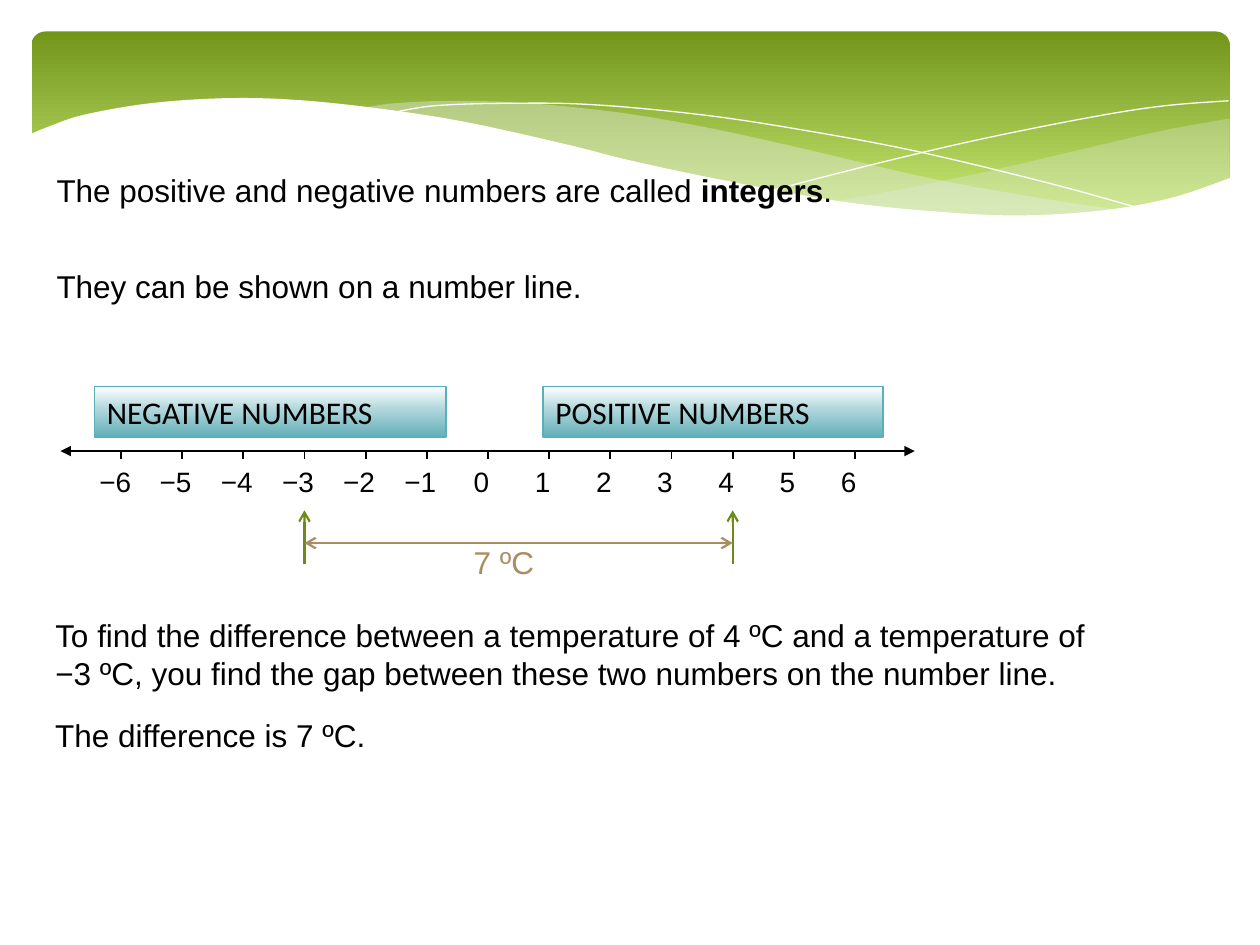
from collections import namedtuple
from copy import deepcopy
from lxml import etree
from pptx import Presentation
from pptx.dml.color import RGBColor
from pptx.enum.shapes import MSO_CONNECTOR as Connector, MSO_SHAPE as Shape
from pptx.enum.text import MSO_AUTO_SIZE as AutoSize
from pptx.oxml.ns import qn
from pptx.util import Inches, Pt

Box = namedtuple("Box", "left top width height")
BLACK, WHITE, MIST, GREEN, TAN = "000000", "FFFFFF", "E7ECED", "6B8C19", "A98D63"
MINUS = "−"


def color(hex_code):
    return RGBColor.from_string(hex_code)


def fill_gradient(shape, stops):
    shape.fill.gradient()
    shape.fill.gradient_angle = 270
    stop_list = shape._element.spPr.find(qn("a:gradFill")).find(qn("a:gsLst"))
    for _ in stops[2:]:
        stop_list.append(deepcopy(stop_list[-1]))
    for stop, (position, hex_code) in zip(shape.fill.gradient_stops, stops):
        stop.position = position
        stop.color.rgb = color(hex_code)


def smooth(points, steps=6):
    padded = [points[0], *points, points[-1]]
    curve = [points[0]]
    for a, b, c, d in zip(padded, padded[1:], padded[2:], padded[3:]):
        for step in range(1, steps + 1):
            t = step / steps
            curve.append(tuple(
                (2 * q + (r - p) * t + (2 * p - 5 * q + 4 * r - s) * t ** 2
                 + (3 * q - p - 3 * r + s) * t ** 3) / 2
                for p, q, r, s in zip(a, b, c, d)))
    return curve


def add_outline(page, box, points, closed):
    spots = [(Inches(box.left + x), Inches(box.top + y)) for x, y in points]
    builder = page.shapes.build_freeform(*spots[0])
    builder.add_line_segments(spots[1:], close=closed)
    shape = builder.convert_to_shape()
    shape.shadow.inherit = False
    return shape


def add_area(page, box, points, hex_code, alpha=100):
    shape = add_outline(page, box, points, True)
    shape.fill.solid()
    shape.fill.fore_color.rgb = color(hex_code)
    shape.line.fill.background()
    if alpha < 100:
        tone = shape._element.spPr.find(qn("a:solidFill"))[0]
        etree.SubElement(tone, qn("a:alpha")).set("val", str(alpha * 1000))


def add_curve(page, box, points):
    shape = add_outline(page, box, smooth(points), False)
    shape.fill.background()
    shape.line.color.rgb = color(WHITE)
    shape.line.width = Pt(0)


def add_text(page, box, lines, size=18, font="Arial", hex_code=BLACK, wrap=False):
    text_box = page.shapes.add_textbox(*map(Inches, box))
    frame = text_box.text_frame
    frame.word_wrap = wrap
    frame.auto_size = AutoSize.SHAPE_TO_FIT_TEXT
    for index, line in enumerate(lines):
        para = frame.add_paragraph() if index else frame.paragraphs[0]
        para.font.size = Pt(size)
        para.font.name = font
        para.font.color.rgb = color(hex_code)
        for position, piece in enumerate(line.split("*")):
            span = para.add_run()
            span.text = piece
            if position % 2:
                span.font.bold = True
    return text_box


def add_line(page, start, end, hex_code, width, **ends):
    line = page.shapes.add_connector(
        Connector.STRAIGHT, *map(Inches, (*start, *end)))
    line.line.color.rgb = color(hex_code)
    line.line.width = Pt(width)
    outline = line.line._get_or_add_ln()
    for end_name in ("head", "tail"):
        if end_name in ends:
            tip = etree.SubElement(outline, qn(f"a:{end_name}End"))
            tip.set("type", ends[end_name])
    etree.SubElement(line._element.spPr, qn("a:effectLst"))


def draw_banner(page, box):
    panel = page.shapes.add_shape(Shape.ROUNDED_RECTANGLE, *map(Inches, box))
    panel.adjustments[0] = 0.07
    panel.shadow.inherit = False
    panel.line.fill.background()
    fill_gradient(panel, [(0, "72951A"), (0.9, "C5E672")])

    right_top = [(9.51, 0.69), (8.96, 0.79), (8.36, 0.93), (7.54, 1.12),
                 (6.81, 1.27), (6.36, 1.35)]
    right_bottom = [(6.36, 1.35), (6.94, 1.42), (7.56, 1.47), (8.19, 1.46),
                    (8.8, 1.38), (9.24, 1.27), (9.51, 1.16)]
    add_area(page, box, smooth(right_top) + smooth(right_bottom), MIST, 29)

    middle_top = [(8.68, 1.42), (8.12, 1.34), (7.16, 1.17), (6.04, 0.91),
                  (5.3, 0.75), (4.64, 0.64), (3.95, 0.57), (3.36, 0.55),
                  (2.88, 0.57), (2.61, 0.61)]
    middle_bottom = [(2.61, 0.61), (3.37, 0.72), (4.24, 0.91), (5.41, 1.18),
                     (6.25, 1.33), (7.11, 1.43), (7.82, 1.48), (8.32, 1.46),
                     (8.68, 1.42)]
    add_area(page, box, smooth(middle_top) + smooth(middle_bottom), MIST, 40)

    add_curve(page, box, [(2.84, 0.65), (3.19, 0.59), (3.76, 0.57), (4.44, 0.58),
                          (5.31, 0.66), (6.11, 0.78), (7.02, 0.95), (8.06, 1.2),
                          (8.82, 1.41)])
    add_curve(page, box, [(5.88, 1.26), (6.7, 1.05), (7.51, 0.86), (8.41, 0.68),
                          (8.99, 0.59), (9.5, 0.55)])

    edge = [(9.52, 1.16), (9.05, 1.32), (8.5, 1.42), (7.84, 1.46), (7.19, 1.43),
            (6.43, 1.35), (5.54, 1.19), (4.78, 1.03), (4.22, 0.89), (3.4, 0.71),
            (2.67, 0.6), (2.05, 0.54), (1.52, 0.53), (0.94, 0.57), (0.42, 0.66),
            (0.15, 0.75), (-0.02, 0.82)]
    add_area(page, box, smooth(edge) + [(-0.02, 1.99), (9.52, 1.99)], WHITE)


def draw_number_line(page, box):
    first, gap, count = box.left + 0.48, 0.4855, 13
    ticks = [first + index * gap for index in range(count)]
    add_line(page, (box.left, box.top), (box.left + box.width, box.top),
             BLACK, 1, head="triangle", tail="triangle")
    for x in ticks:
        add_line(page, (x, box.top), (x, box.top + 0.06), BLACK, 1)

    labels = [str(value).replace("-", MINUS) for value in range(-6, 7)]
    scale_box = Box(box.left + 0.21, box.top + 0.06, 6.33, 0.37)
    scale = add_text(page, scale_box, ["\t" + "\t".join(labels)], 16, wrap=True)
    properties = scale.text_frame.paragraphs[0]._p.get_or_add_pPr()
    tabs = etree.Element(qn("a:tabLst"))
    properties.insert(0, tabs)
    for x in ticks:
        tab = etree.SubElement(tabs, qn("a:tab"))
        tab.set("pos", str(Inches(x - 0.05 - scale_box.left - 0.1)))
        tab.set("algn", "ctr")

    for text, offset, width in [("POSITIVE NUMBERS", 3.83, 2.7),
                                ("NEGATIVE NUMBERS", 0.27, 2.79)]:
        sign = add_text(page, Box(box.left + offset, box.top - 0.51, width, 0.4),
                        [text], font="Calibri")
        fill_gradient(sign, [(0, WHITE), (0.44, "B1D7DC"), (1, "63AFB8")])
        sign.line.color.rgb = color("59B0B9")
        sign.line.width = Pt(0.75)

    low, high = ticks[3], ticks[10]
    for x in (high, low):
        add_line(page, (x, box.top + 0.9), (x, box.top + 0.47), GREEN, 1.25,
                 tail="arrow")
    level = box.top + 0.73
    add_line(page, (low, level), (high, level), TAN, 1.25, head="arrow", tail="arrow")
    add_text(page, Box(box.left + 3.18, level - 0.05, 0.69, 0.4), ["7 ºC"],
             hex_code=TAN)


def draw_introduction(page, box):
    add_text(page, Box(box.left, box.top, box.width, 0.4),
             ["The positive and negative numbers are called *integers*."])
    add_text(page, Box(box.left, box.top + 0.76, 4.41, 0.4),
             ["They can be shown on a number line."])


def draw_conclusion(page, box):
    add_text(page, Box(box.left, box.top, box.width, 0.71), [
        "To find the difference between a temperature of 4 ºC and a temperature of",
        "−3 ºC, you find the gap between these two numbers on the number line."])
    add_text(page, Box(box.left, box.top + 0.79, 2.66, 0.4),
             ["The difference is 7 ºC."])


def main():
    deck = Presentation()
    deck.slide_width, deck.slide_height = Inches(10), Inches(7.5)
    page = deck.slides.add_slide(deck.slide_layouts[6])
    draw_banner(page, Box(0.25, 0.25, 9.51, 1.56))
    draw_introduction(page, Box(0.35, 1.31, 6.42, 1.16))
    draw_number_line(page, Box(0.48, 3.58, 6.78, 0.9))
    draw_conclusion(page, Box(0.34, 4.84, 8.45, 1.19))
    deck.save("out.pptx")


if __name__ == "__main__":
    main()
